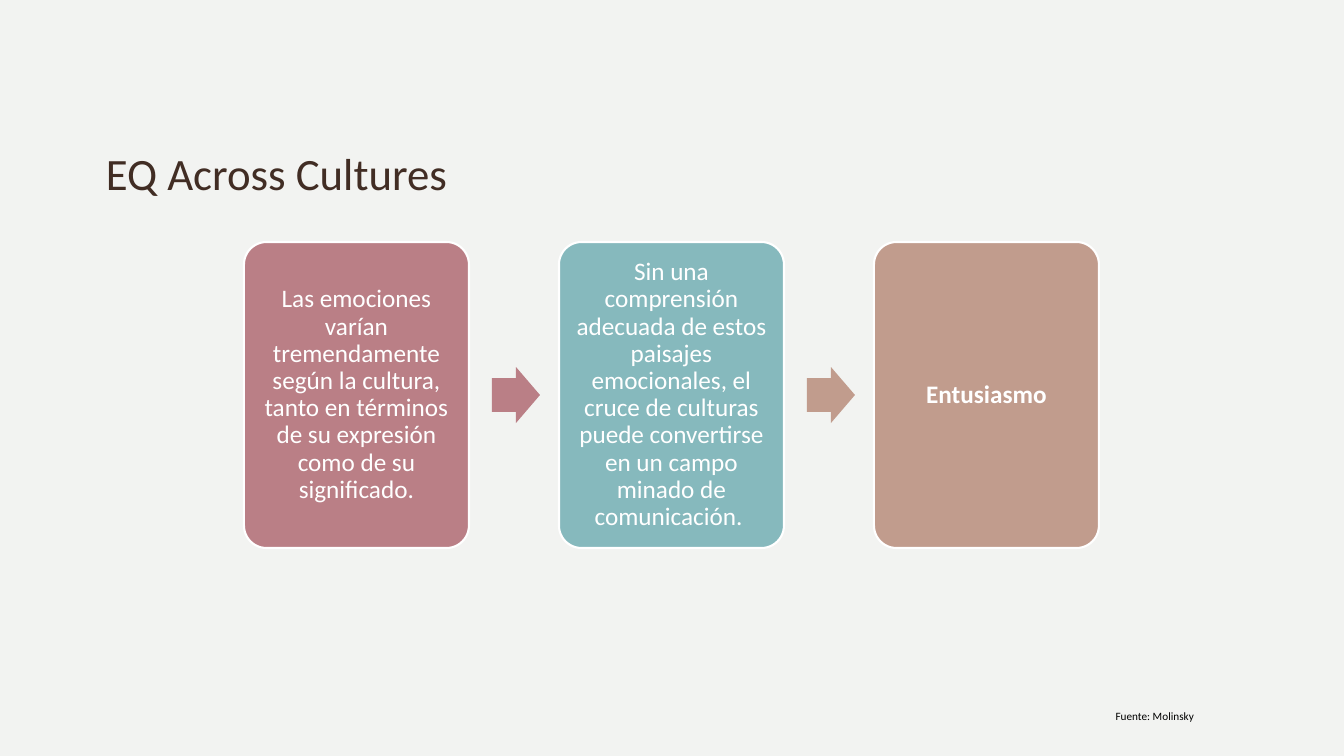
"""Build the slide on emotional intelligence across cultures."""
import pptx
import pptx.dml.color
import pptx.enum.shapes
import pptx.enum.text
import pptx.oxml.ns
import pptx.util
from lxml import etree

RGBColor = pptx.dml.color.RGBColor
SHAPES = pptx.enum.shapes.MSO_SHAPE
ANCHOR = pptx.enum.text.MSO_ANCHOR
ALIGN = pptx.enum.text.PP_ALIGN

SAGE = RGBColor(0xA9, 0xB5, 0xA2)
BROWN = RGBColor(0x41, 0x2D, 0x24)
ROSE = RGBColor(0xBA, 0x7F, 0x86)
TEAL = RGBColor(0x86, 0xB9, 0xBD)
TAN = RGBColor(0xC1, 0x9C, 0x8D)
WHITE = RGBColor(0xFF, 0xFF, 0xFF)
BLACK = RGBColor(0x00, 0x00, 0x00)

EMU_PER_PX = 914400 / 100.8
SLIDE_WIDTH, SLIDE_HEIGHT = 1344, 756
CARD_LEFT, CARD_TOP, CARD_WIDTH, CARD_HEIGHT = 244, 242, 225, 306
CARD_PITCH = 315
ARROW_WIDTH, ARROW_HEIGHT = 48, 56
ARROW_OFFSET = 248
CARD_INSET = 7


def px(*lengths):
    return [pptx.util.Emu(round(length * EMU_PER_PX)) for length in lengths]


def write(box, text, size, color, align=ALIGN.LEFT, anchor=ANCHOR.TOP,
          bold=False, spacing=1.0, inset=None):
    frame = box.text_frame
    frame.word_wrap = True
    frame.vertical_anchor = anchor
    if inset is not None:
        (margin,) = px(inset)
        frame.margin_left = frame.margin_right = margin
        frame.margin_top = frame.margin_bottom = margin
    para = frame.paragraphs[0]
    para.alignment = align
    para.line_spacing = spacing
    span = para.add_run()
    span.text = text
    span.font.name = "Calibri"
    span.font.size = pptx.util.Pt(size)
    span.font.bold = bold
    span.font.color.rgb = color


deck = pptx.Presentation()
deck.slide_width, deck.slide_height = px(SLIDE_WIDTH, SLIDE_HEIGHT)
page = deck.slides.add_slide(deck.slide_layouts[6])
shapes = page.shapes

backdrop = shapes.add_shape(SHAPES.RECTANGLE, *px(0, 0, SLIDE_WIDTH, SLIDE_HEIGHT))
backdrop.shadow.inherit = False
backdrop.fill.solid()
backdrop.fill.fore_color.rgb = SAGE
backdrop.line.fill.background()
tint = backdrop.fill._xPr.find(".//" + pptx.oxml.ns.qn("a:srgbClr"))
etree.SubElement(tint, pptx.oxml.ns.qn("a:alpha"), val="15000")

title = shapes.add_textbox(*px(96, 65, 1152, 139))
write(title, "EQ Across Cultures", size=32, color=BROWN, anchor=ANCHOR.BOTTOM)

cards = [
    ("Las emociones varían tremendamente según la cultura, tanto en términos "
     "de su expresión como de su significado.", ROSE, False, ROSE),
    ("Sin una comprensión adecuada de estos paisajes emocionales, el cruce de "
     "culturas puede convertirse en un campo minado de comunicación. ",
     TEAL, False, TAN),
    ("Entusiasmo", TAN, True, None),
]
for index, (text, color, bold, arrow_color) in enumerate(cards):
    left = CARD_LEFT + index * CARD_PITCH
    card = shapes.add_shape(SHAPES.ROUNDED_RECTANGLE,
                            *px(left, CARD_TOP, CARD_WIDTH, CARD_HEIGHT))
    card.adjustments[0] = 0.1
    card.shadow.inherit = False
    card.fill.solid()
    card.fill.fore_color.rgb = color
    card.line.color.rgb = WHITE
    card.line.width = pptx.util.Pt(1.5)
    write(card, text, size=18, color=WHITE, align=ALIGN.CENTER,
          anchor=ANCHOR.MIDDLE, bold=bold, spacing=0.9, inset=CARD_INSET)
    if arrow_color is not None:
        arrow_top = CARD_TOP + (CARD_HEIGHT - ARROW_HEIGHT) // 2
        arrow = shapes.add_shape(
            SHAPES.RIGHT_ARROW,
            *px(left + ARROW_OFFSET, arrow_top, ARROW_WIDTH, ARROW_HEIGHT))
        arrow.adjustments[0] = 0.6
        arrow.adjustments[1] = 0.5
        arrow.shadow.inherit = False
        arrow.fill.solid()
        arrow.fill.fore_color.rgb = arrow_color
        arrow.line.fill.background()

source = shapes.add_textbox(*px(750, 704, 454, 24))
write(source, "Fuente: Molinsky", size=8, color=BLACK, align=ALIGN.RIGHT)

deck.save("out.pptx")
